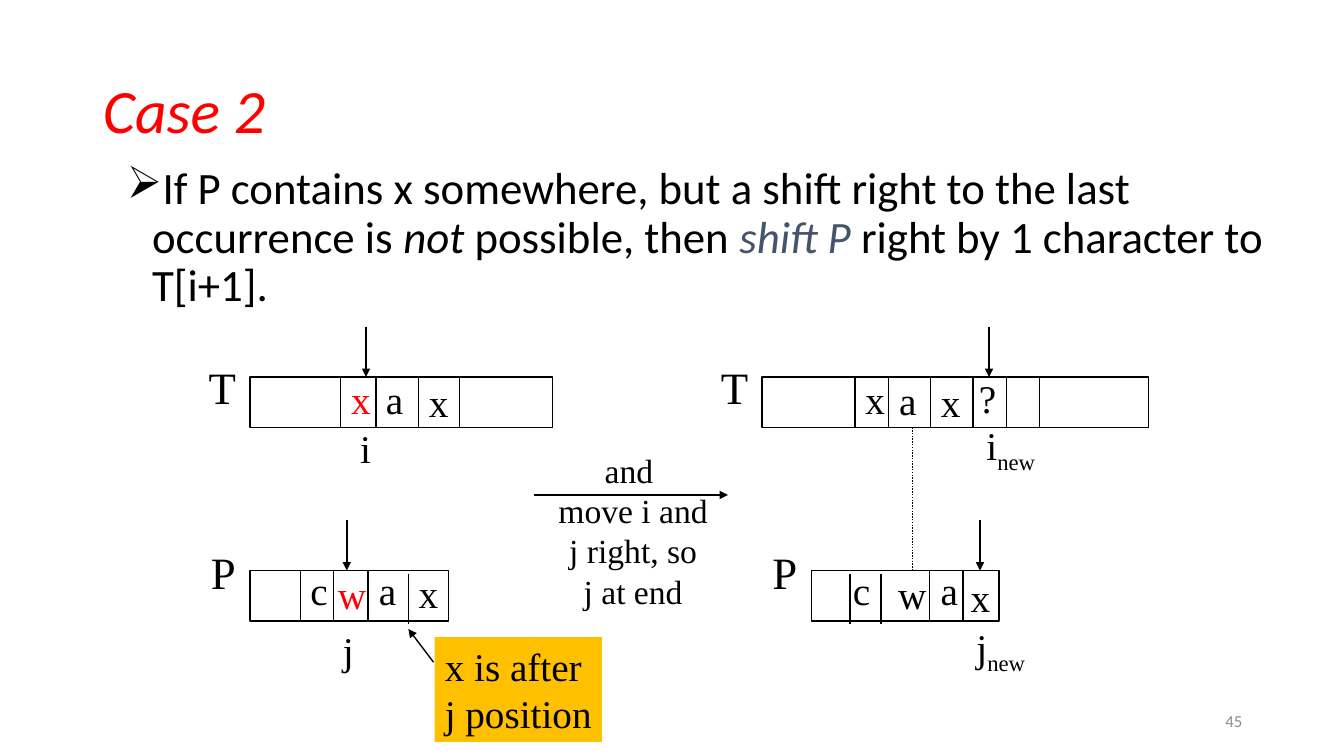
from lxml import etree
from pptx import Presentation
from pptx.dml.color import RGBColor
from pptx.enum.dml import MSO_LINE
from pptx.enum.shapes import MSO_CONNECTOR, MSO_SHAPE
from pptx.enum.text import MSO_ANCHOR, MSO_AUTO_SIZE, PP_ALIGN
from pptx.oxml.ns import qn
from pptx.util import Inches, Pt

STRAIGHT = MSO_CONNECTOR.STRAIGHT
RECTANGLE = MSO_SHAPE.RECTANGLE
DOTTED = MSO_LINE.ROUND_DOT
TOP, MIDDLE = MSO_ANCHOR.TOP, MSO_ANCHOR.MIDDLE
LEFT, CENTER, RIGHT = PP_ALIGN.LEFT, PP_ALIGN.CENTER, PP_ALIGN.RIGHT
FIT_SHAPE, NO_FIT = MSO_AUTO_SIZE.SHAPE_TO_FIT_TEXT, MSO_AUTO_SIZE.NONE

COLORS = {
    "black": "000000",
    "red": "FF0000",
    "slate": "44546A",
    "amber": "FFC000",
    "gray": "8C8C8C",
}
SANS, SERIF = "Calibri", "Times New Roman"

presentation = Presentation()
presentation.slide_width = Inches(13.33)
presentation.slide_height = Inches(7.5)
slide = presentation.slides.add_slide(presentation.slide_layouts[5])
shapes = slide.shapes


def write(shape, *paragraphs, size=28, font=SERIF, color="black", italic=False, align=CENTER,
          anchor=MIDDLE, wrap=False, fit=FIT_SHAPE, spacing=None, bullet=None):
    """Each paragraph is a string or a list of (text, run format) pairs."""
    frame = shape.text_frame
    frame.word_wrap, frame.auto_size, frame.vertical_anchor = wrap, fit, anchor
    for index, content in enumerate(paragraphs):
        paragraph = frame.add_paragraph() if index else frame.paragraphs[0]
        paragraph.alignment = align
        paragraph.line_spacing = spacing
        if bullet:
            properties = paragraph._p.get_or_add_pPr()
            properties.set("marL", str(Inches(0.25)))
            properties.set("indent", str(-Inches(0.25)))
            etree.SubElement(properties, qn("a:buChar")).set("char", bullet)
        runs = [(content, {})] if isinstance(content, str) else content
        for text, run_format in runs:
            run = paragraph.add_run()
            run.text = text
            run.font.size, run.font.name = Pt(size), font
            run.font.italic = run_format.get("italic", italic)
            run.font.color.rgb = RGBColor.from_string(COLORS[run_format.get("color", color)])
            if run_format.get("subscript"):
                run._r.get_or_add_rPr().set("baseline", "-25000")


def add_line(x1, y1, x2, y2, arrow=False, dash=None):
    line = shapes.add_connector(STRAIGHT, Inches(x1), Inches(y1), Inches(x2), Inches(y2))
    line.line.color.rgb = RGBColor.from_string(COLORS["black"])
    line.line.width = Pt(1)
    if dash:
        line.line.dash_style = dash
    if arrow:
        etree.SubElement(line.line._get_or_add_ln(), qn("a:tailEnd")).set("type", "triangle")
    etree.SubElement(line._element.spPr, qn("a:effectLst"))


# Title
title = shapes.title
title.left, title.top, title.width, title.height = map(Inches, (0.92, 0.4, 11.5, 1.45))
write(title, "Case 2", size=44, font=SANS, color="red", italic=True, align=LEFT,
      wrap=True, fit=NO_FIT, spacing=0.9)

# Rule for this case
rule = shapes.add_textbox(Inches(1.16), Inches(1.6), Inches(11.75), Inches(1.75))
write(rule,
      [("If P contains x somewhere, but a shift right to the last occurrence is ", {}),
       ("not", {"italic": True}),
       (" possible, then ", {}),
       ("shift P", {"italic": True, "color": "slate"}),
       (" right by 1 character to T[i+1].", {})],
      size=32, font=SANS, align=LEFT, anchor=TOP, wrap=True, fit=NO_FIT, spacing=0.9, bullet="➢")

# Text and pattern strips: left, top, width, divider positions, lowered dividers, pointer
TEXT_TOP, PATTERN_TOP, CELL_HEIGHT = 3.74, 5.66, 0.5
strips = [
    (2.48, TEXT_TOP, 3, [3.38, 3.73, 4.15, 4.56], [], 3.63),
    (2.48, PATTERN_TOP, 1.97, [2.98, 3.31, 3.65], [4.05], 3.44),
    (7.56, TEXT_TOP, 3.83, [8.48, 8.81, 9.23, 9.65, 9.98, 10.31], [], 9.81),
    (8.05, PATTERN_TOP, 1.86, [9.22, 9.55], [8.43, 8.74], 9.72),
]
for left, top, width, dividers, lowered, pointer in strips:
    strip = shapes.add_shape(RECTANGLE, Inches(left), Inches(top), Inches(width), Inches(CELL_HEIGHT))
    strip.shadow.inherit = False
    strip.fill.background()
    strip.line.color.rgb = RGBColor.from_string(COLORS["black"])
    strip.line.width = Pt(1)
    for x in dividers:
        add_line(x, top, x, top + CELL_HEIGHT)
    for x in lowered:
        add_line(x, top + 0.03, x, top + 0.03 + CELL_HEIGHT)
    add_line(pointer, top - 0.5, pointer, top, arrow=True)

# Strip names
for name, left, top, width in [("T", 1.97, 3.52, 0.47), ("P", 1.99, 5.36, 0.45),
                               ("T", 7.05, 3.52, 0.47), ("P", 7.56, 5.36, 0.45)]:
    write(shapes.add_textbox(Inches(left), Inches(top), Inches(width), Inches(0.63)), name, size=32)

# Characters and indices: content, left, top, width, color
new = ("new", {"subscript": True})
labels = [
    ("x", 3.38, 3.67, 0.4, "red"),
    ("a", 3.73, 3.67, 0.37, "black"),
    ("x", 4.15, 3.7, 0.4, "black"),
    ("i", 3.47, 4.16, 0.31, "black"),
    ("c", 2.98, 5.57, 0.37, "black"),
    ("w", 3.25, 5.61, 0.48, "red"),
    ("a", 3.66, 5.57, 0.37, "black"),
    ("x", 4.05, 5.6, 0.4, "black"),
    ("j", 3.3, 6.16, 0.31, "black"),
    ("x", 8.48, 3.67, 0.4, "black"),
    ("a", 8.82, 3.68, 0.37, "black"),
    ("x", 9.23, 3.7, 0.4, "black"),
    ("?", 9.61, 3.66, 0.37, "black"),
    ([("i", {}), new], 9.65, 4.16, 0.75, "black"),
    ("c", 8.35, 5.57, 0.39, "black"),
    ("w", 8.81, 5.61, 0.4, "black"),
    ("a", 9.23, 5.57, 0.37, "black"),
    ("x", 9.52, 5.64, 0.41, "black"),
    ([("j", {}), new], 9.55, 6.16, 0.75, "black"),
]
for content, left, top, width, color in labels:
    label = shapes.add_textbox(Inches(left), Inches(top), Inches(width), Inches(0.57))
    write(label, content, color=color)

# Alignment of the shifted pattern with the text
add_line(9.05, TEXT_TOP + CELL_HEIGHT, 9.05, PATTERN_TOP, dash=DOTTED)

# Move from the left state to the right state
add_line(5.3, 4.91, 7.22, 4.91, arrow=True)
move = shapes.add_textbox(Inches(5.4), Inches(4.41), Inches(1.76), Inches(1.7))
write(move, "and ", "move i and ", "j right, so", "j at end", size=24)

# Callout on the last occurrence of x
callout = shapes.add_shape(RECTANGLE, Inches(4.31), Inches(6.32), Inches(1.66), Inches(1.04))
callout.shadow.inherit = False
callout.fill.solid()
callout.fill.fore_color.rgb = RGBColor.from_string(COLORS["amber"])
callout.line.fill.background()
write(callout, "x is after ", "j position")
add_line(4.3, 6.57, 4.05, 6.24, arrow=True)

# Slide number
number = shapes.add_textbox(Inches(9.42), Inches(6.95), Inches(3), Inches(0.4))
write(number, "45", size=12, font=SANS, color="gray", align=RIGHT, wrap=True, fit=NO_FIT)

presentation.save("out.pptx")
